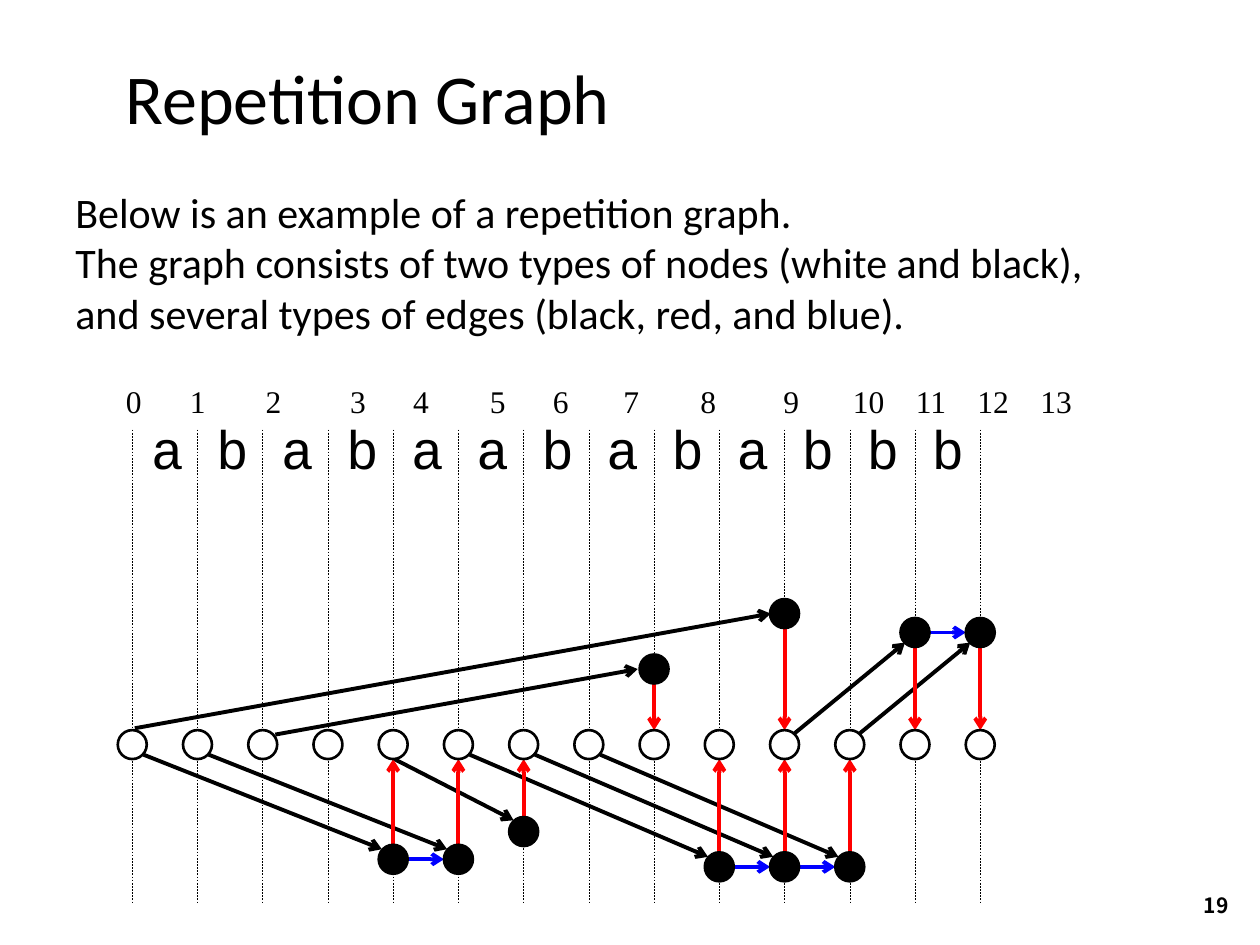
from lxml.etree import SubElement
from pptx import Presentation
from pptx.dml.color import RGBColor
from pptx.enum.dml import MSO_LINE
from pptx.enum.shapes import MSO_CONNECTOR, MSO_SHAPE
from pptx.enum.text import MSO_ANCHOR, PP_ALIGN
from pptx.oxml.ns import qn
from pptx.util import Inches, Pt


def color(value):
    return RGBColor.from_string(value)


def edge(start, end, ink, weight=2.25, dash=None):
    connector = slide.shapes.add_connector(
        MSO_CONNECTOR.STRAIGHT,
        *(round(value * unit) for point in (start, end) for value, unit in zip(point, (column, row))),
    )
    connector.line.color.rgb = color(ink)
    connector.line.width = Pt(weight)
    if dash:
        connector.line.dash_style = dash
    else:
        SubElement(connector.line._get_or_add_ln(), qn("a:tailEnd"), type="arrow")
    SubElement(connector._element.spPr, qn("a:effectLst"))


deck = Presentation()
deck.slide_width, deck.slide_height = Inches(10), Inches(7.5)
slide = deck.slides.add_slide(deck.slide_layouts[6])
column, row = deck.slide_width / 100, deck.slide_height / 75

word = "ababaabababbb"
intro = "\v".join([
    "Below is an example of a repetition graph. ",
    "The graph consists of two types of nodes (white and black),",
    "and several types of edges (black, red, and blue).",
])
positions = "\t".join(str(index) for index in range(len(word) + 1))
label_stops = [5.1, 11.1, 17.8, 22.8, 28.9, 33.9, 39.5, 45.6, 52.2, 57.7, 62.7, 67.6, 72.6]
captions = [
    ("19", (91.7, 69.8, 6.8, 4), [],
     {"word_wrap": True, "vertical_anchor": MSO_ANCHOR.MIDDLE}, {"alignment": PP_ALIGN.RIGHT},
     {"name": "Noto Sans CJK JP", "size": Pt(12), "bold": True}),
    ("Repetition Graph", (9, 3, 86, 9.3), [],
     {"word_wrap": True, "vertical_anchor": MSO_ANCHOR.MIDDLE}, {},
     {"name": "Calibri", "size": Pt(40)}),
    (intro, (5, 14.3, 92.2, 19.7), [], {"word_wrap": True}, {},
     {"name": "Calibri", "size": Pt(24)}),
    (positions, (9, 29.8, 79, 4), label_stops, {"word_wrap": True}, {},
     {"name": "Times New Roman", "size": Pt(18)}),
    (" ".join(word), (11, 32.5, 67.2, 6.2), [], {"word_wrap": False}, {},
     {"name": "Courier New", "size": Pt(31)}),
]

for wording, (left, top, width, height), stops, frame_format, paragraph_format, font_format in captions:
    frame = slide.shapes.add_textbox(
        round(left * column), round(top * row), round(width * column), round(height * row)
    ).text_frame
    paragraph = frame.paragraphs[0]
    paragraph.text = wording
    if stops:
        tabs = SubElement(paragraph._p.get_or_add_pPr(), qn("a:tabLst"))
        for stop in stops:
            SubElement(tabs, qn("a:tab"), pos=str(round(stop * column)), algn="l")
    for target, settings in (
        (frame, frame_format), (paragraph, paragraph_format), (paragraph.font, font_format)
    ):
        for attribute, value in settings.items():
            setattr(target, attribute, value)
    paragraph.font.color.rgb = color("000000")

first, last = 10.5, 77.8
gap = (last - first) / len(word)
places = [first + index * gap for index in range(len(word) + 1)]
base = 59.1
radius = 1.15
black_rows = {4: 68.2, 5: 68.2, 6: 66, 8: 53.1, 9: 68.8, 10: 48.7, 11: 68.8, 12: 50.2, 13: 50.2}
black_nodes = [(place, level) for place, level in black_rows.items()] + [(10, 68.8)]

for place in places:
    edge((place, 34.1), (place, 71.7), "000000", 0.25, MSO_LINE.DASH)

falling = ((0.9, 0.8), (-0.9, -0.8))
rising = ((0.8, -0.9), (-0.8, 0.8))
shallow = ((1, -0.8), (-1.3, 0))
jumps = [
    (0, 4, 68.2, falling), (1, 5, 68.2, falling), (4, 6, 66, ((0, 1.1), (-0.8, -0.9))),
    (5, 9, 68.8, falling), (6, 10, 68.8, falling), (7, 11, 68.8, falling),
    (0, 10, 48.7, ((0.2, -1.3), (-1.1, 0))), (2, 8, 53.1, shallow),
    (10, 12, 50.2, rising), (11, 13, 50.2, rising),
]
for source, target, level, ((leave_x, leave_y), (reach_x, reach_y)) in jumps:
    edge((places[source] + leave_x, base + leave_y),
         (places[target] + reach_x, level + reach_y), "000000")

for place, level in black_nodes:
    side = radius if level > base else -radius
    edge((places[place], level - side), (places[place], base + side), "FF0000")
    if (place + 1, level) in black_nodes:
        edge((places[place] + radius, level), (places[place + 1] - radius, level), "0000FF")

white_nodes = [(place, base) for place in range(len(places))]
for nodes, fill in ((black_nodes, "000000"), (white_nodes, "FFFFFF")):
    for place, level in nodes:
        node = slide.shapes.add_shape(
            MSO_SHAPE.OVAL, round((places[place] - radius) * column), round((level - radius) * row),
            round(2 * radius * column), round(2 * radius * row),
        )
        node.shadow.inherit = False
        node.fill.solid()
        node.fill.fore_color.rgb = color(fill)
        node.line.color.rgb = color("000000")
        node.line.width = Pt(1.5)

deck.save("out.pptx")
